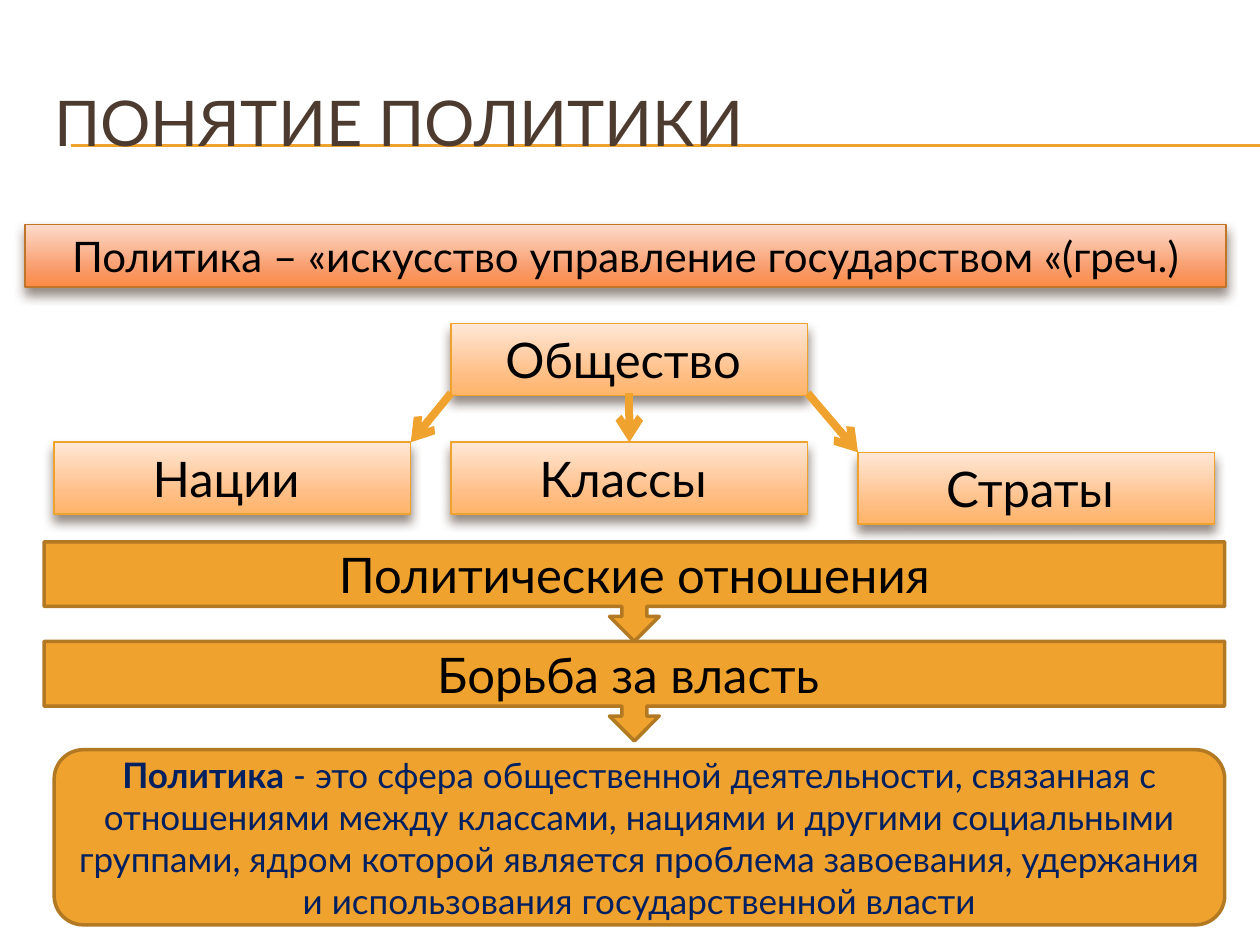
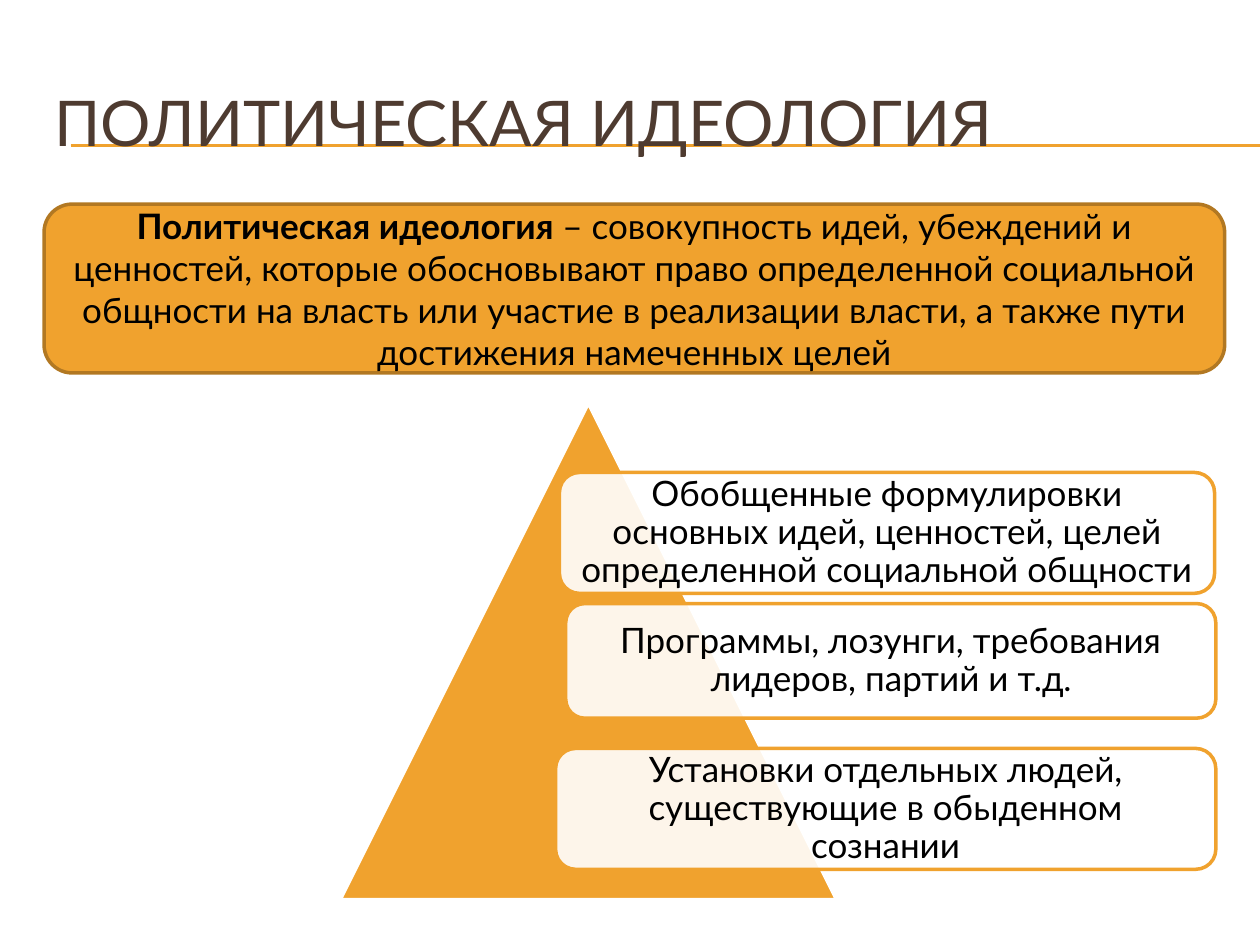
from copy import deepcopy
from dataclasses import dataclass

from lxml import etree
from pptx import Presentation
from pptx.dml.color import RGBColor
from pptx.enum.shapes import MSO_CONNECTOR, MSO_SHAPE
from pptx.enum.text import MSO_ANCHOR, MSO_AUTO_SIZE, PP_ALIGN
from pptx.oxml.ns import qn
from pptx.util import Inches, Pt

RECT = MSO_SHAPE.RECTANGLE
ROUND = MSO_SHAPE.ROUNDED_RECTANGLE
TRIANGLE = MSO_SHAPE.ISOSCELES_TRIANGLE
CALLOUT = MSO_SHAPE.DOWN_ARROW_CALLOUT
STRAIGHT = MSO_CONNECTOR.STRAIGHT
TOP, MIDDLE = MSO_ANCHOR.TOP, MSO_ANCHOR.MIDDLE
LEFT, CENTER = PP_ALIGN.LEFT, PP_ALIGN.CENTER
NO_AUTOFIT = MSO_AUTO_SIZE.NONE
TITLE_ONLY = 5


@dataclass(frozen=True)
class Theme:
    """Colours, font and sizes shared by both slides."""
    font: str = "Lato"
    brown: str = "4E3B30"
    amber: str = "F0A22E"
    dark_amber: str = "B27822"
    rust: str = "C17529"
    navy: str = "002060"
    black: str = "000000"
    white: str = "FFFFFF"
    peach: tuple = ((0, "FFE7D7"), (0.72, "FFBE84"), (1, "FFB468"))
    coral: tuple = ((0, "FDDBCC"), (0.72, "F89B69"), (1, "FC8A43"))
    title: int = 36
    heading: int = 28
    lead: int = 24
    body: int = 20
    small: int = 16
    rule: float = 0.75
    hairline: float = 0.79
    outline: float = 2
    arrow: float = 4.5


THEME = Theme()


def rgb(code):
    """Turn a hex code into a colour."""
    return RGBColor.from_string(code)


def write(frame, runs, size, color=THEME.black, align=CENTER, anchor=MIDDLE):
    """Fill a text frame with (text, bold[, size]) runs."""
    frame.word_wrap = True
    frame.auto_size = NO_AUTOFIT
    frame.vertical_anchor = anchor
    paragraph = frame.paragraphs[0]
    paragraph.alignment = align
    for text, bold, *own_size in runs:
        run = paragraph.add_run()
        run.text = text
        run.font.name = THEME.font
        run.font.size = Pt(own_size[0] if own_size else size)
        run.font.bold = bold
        run.font.color.rgb = rgb(color)
    return paragraph


def add_block(slide, kind, box, fill=THEME.amber, line=THEME.dark_amber, width=THEME.outline):
    """Add a flat preset shape with an outline."""
    block = slide.shapes.add_shape(kind, *map(Inches, box))
    block.shadow.inherit = False
    block.fill.solid()
    block.fill.fore_color.rgb = rgb(fill)
    block.line.color.rgb = rgb(line)
    block.line.width = Pt(width)
    return block


def add_raised_box(slide, box, text, size, stops=THEME.peach, line=THEME.amber):
    """Add a shaded rectangle with a soft shadow and a caption."""
    raised = add_block(slide, RECT, box, line=line, width=THEME.hairline)
    raised.fill.gradient()
    raised.fill.gradient_angle = 270
    properties = raised._element.spPr
    stop_list = properties.find(".//" + qn("a:gsLst"))
    stop_list.append(deepcopy(stop_list[0]))
    for stop, (position, color) in zip(raised.fill.gradient_stops, stops):
        stop.position = position
        stop.color.rgb = rgb(color)
    shadow = etree.SubElement(
        properties.find(qn("a:effectLst")), qn("a:outerShdw"),
        blurRad=str(Pt(6)), dist=str(Pt(4)), dir="5400000", rotWithShape="0")
    tint = etree.SubElement(shadow, qn("a:srgbClr"), val=THEME.brown)
    etree.SubElement(tint, qn("a:alpha"), val="60000")
    write(raised.text_frame, [(text, False)], size, anchor=TOP)


def add_line(slide, start, end, width, arrow=False):
    """Add a straight amber line, with an arrowhead if asked."""
    line = slide.shapes.add_connector(STRAIGHT, *map(Inches, (*start, *end)))
    line.line.color.rgb = rgb(THEME.amber)
    line.line.width = Pt(width)
    properties = line._element.spPr
    if arrow:
        etree.SubElement(properties.find(qn("a:ln")), qn("a:tailEnd"), type="arrow")
    etree.SubElement(properties, qn("a:effectLst"))
    return line


def add_titled_slide(deck, text):
    """Start a slide with its title over the amber rule."""
    slide = deck.slides.add_slide(deck.slide_layouts[TITLE_ONLY])
    title = slide.shapes.title
    title.left, title.top, title.width, title.height = map(Inches, (0.33, 0.5, 9.5, 0.92))
    write(title.text_frame, [(text, False)], THEME.title, THEME.brown, LEFT)
    for y in (1.15, 1.16):
        rule = add_line(slide, (0.56, y), (10, y), THEME.rule)
        title._element.addprevious(rule._element)
    return slide


def add_definition(slide, box, term, meaning, color=THEME.black):
    """Add a rounded panel that opens with a bold term."""
    panel = add_block(slide, ROUND, box)
    write(panel.text_frame, [(term, True), (meaning, False)], THEME.body, color)


def add_society_tree(slide, left, top):
    """Split society into its three groups with arrows."""
    width, height = 2.83, 0.57
    root_left, root_foot = left + 3.15, top + 0.55
    add_raised_box(slide, (root_left, top, width, height), "Общество ", THEME.heading)
    groups = (("Нации ", 0, 0.94), ("Классы ", 3.15, 0.94), ("Страты ", 6.38, 1.02))
    for name, dx, dy in groups:
        add_raised_box(slide, (left + dx, top + dy, width, height), name, THEME.heading)
    for (_, dx, dy), share, landing in zip(groups, (0, 0.5, 1), (1, 0.5, 0)):
        start = (root_left + share * width, root_foot)
        add_line(slide, start, (left + dx + landing * width, top + dy), THEME.arrow, arrow=True)


def add_callout_chain(slide, left, top, width, captions):
    """Stack callouts that each point to the next step."""
    height = 0.79
    for step, caption in enumerate(captions):
        callout = add_block(slide, CALLOUT, (left, top + step * height, width, height))
        write(callout.text_frame, [(caption, False)], THEME.heading)


def add_ideology_pyramid(slide, left, top, side, levels):
    """Draw a pyramid with translucent level labels over its right side."""
    add_block(slide, TRIANGLE, (left, top, side, side), line=THEME.white)
    for (dx, dy, width, height), runs in levels:
        label = add_block(slide, ROUND, (left + dx, top + dy, width, height),
                          THEME.white, THEME.amber)
        paint = label._element.spPr.find(qn("a:solidFill"))[0]
        etree.SubElement(paint, qn("a:alpha"), val="90000")
        frame = label.text_frame
        frame.margin_left = frame.margin_right = Inches(0.08)
        frame.margin_top = frame.margin_bottom = Inches(0.08)
        write(frame, runs, THEME.body).line_spacing = 0.9


def build_concept_slide(deck):
    """Build the slide on the concept of politics."""
    slide = add_titled_slide(deck, "ПОНЯТИЕ ПОЛИТИКИ")
    add_raised_box(slide, (0.2, 1.78, 9.53, 0.5),
                   "Политика – «искусство управление государством «(греч.)",
                   THEME.lead, THEME.coral, THEME.rust)
    add_society_tree(slide, 0.43, 2.57)
    add_callout_chain(slide, 0.35, 4.3, 9.37, ("Политические отношения", "Борьба за власть "))
    add_definition(
        slide, (0.43, 5.95, 9.29, 1.39), "Политика",
        " - это сфера общественной деятельности, связанная с отношениями между классами, "
        "нациями и другими социальными группами, ядром которой является проблема "
        "завоевания, удержания и использования государственной власти", THEME.navy)


def build_ideology_slide(deck):
    """Build the slide on political ideology."""
    slide = add_titled_slide(deck, "ПОЛИТИЧЕСКАЯ ИДЕОЛОГИЯ")
    add_definition(
        slide, (0.35, 1.62, 9.37, 1.34), "Политическая идеология ",
        "– совокупность идей, убеждений и ценностей, которые обосновывают право "
        "определенной социальной общности на власть или участие в реализации власти, "
        "а также пути достижения намеченных целей")
    add_ideology_pyramid(slide, 2.7, 3.2, 3.94, (
        ((1.74, 0.55, 5.2, 0.96),
         [("Обобщенные формулировки основных идей, ценностей, целей "
           "определенной социальной общности", False)]),
        ((1.79, 1.59, 5.16, 0.91),
         [("Программы, лозунги, требования лидеров, партий и т.д", False),
          (".", True, THEME.small)]),
        ((1.71, 2.74, 5.24, 0.96),
         [("Установки отдельных людей, существующие в обыденном сознании", False)]),
    ))


def main():
    """Build and save the deck."""
    deck = Presentation()
    deck.slide_width, deck.slide_height = Inches(10), Inches(7.5)
    build_concept_slide(deck)
    build_ideology_slide(deck)
    deck.save("out.pptx")


if __name__ == "__main__":
    main()
